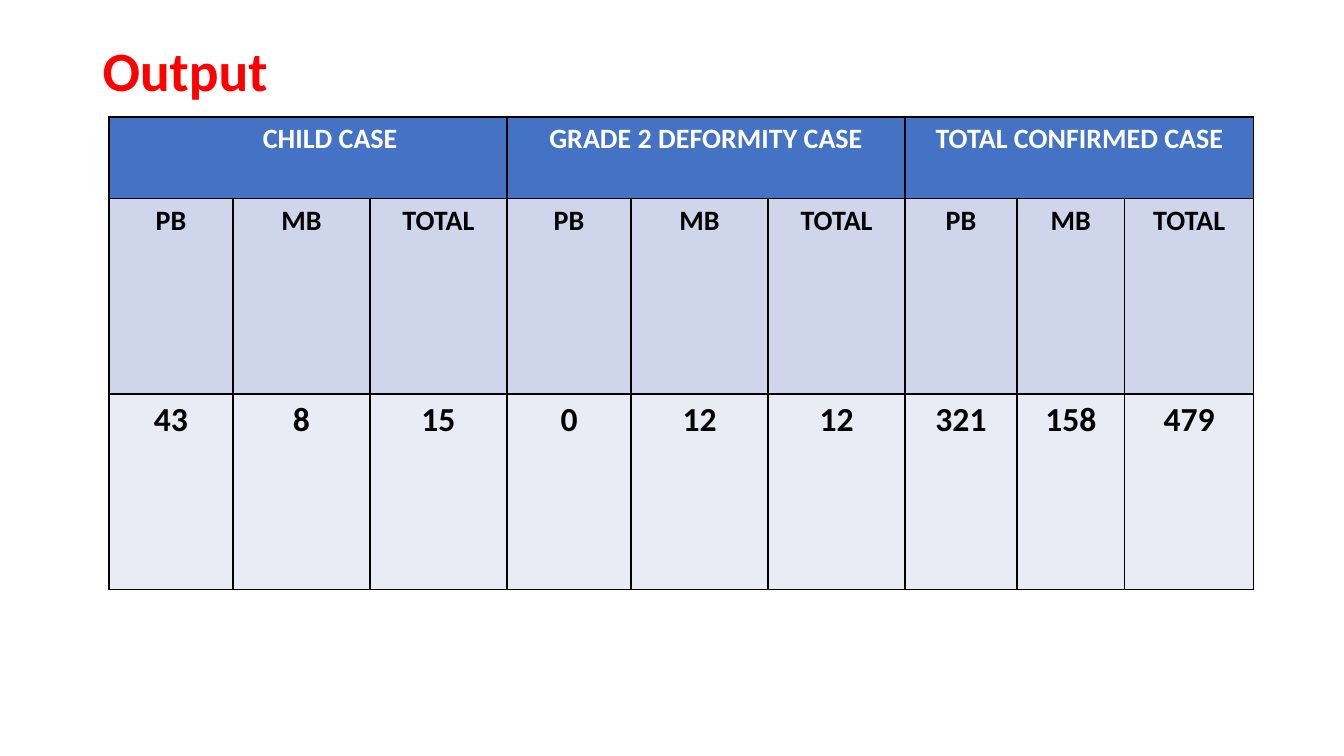
import pptx
import pptx.util
import pptx.dml.color
import pptx.enum.text
import pptx.oxml
import pptx.oxml.ns

Pt = pptx.util.Pt
ALIGN = pptx.enum.text.PP_ALIGN
ANCHOR = pptx.enum.text.MSO_ANCHOR

TITLE = "Output"
GROUPS = ["CHILD CASE", "GRADE 2 DEFORMITY CASE", "TOTAL CONFIRMED CASE"]
KINDS = ["PB", "MB", "TOTAL"]
COUNTS = ["43", "8", "15", "0", "12", "12", "321", "158", "479"]
WIDTHS = [88.6, 97.9, 97.9, 88.6, 97.9, 97.9, 79.9, 77, 92.2]
HEIGHTS = [58.3, 139.7, 139.7]
SPAN = len(KINDS)
HEAD = [GROUPS[c // SPAN] if c % SPAN == 0 else "" for c in range(len(WIDTHS))]
ROWS = [
    (HEAD, "4472C4", "FFFFFF", 20),
    (KINDS * len(GROUPS), "CFD5EA", "000000", 20),
    (COUNTS, "E9EBF5", "000000", 24),
]


def color(code):
    return pptx.dml.color.RGBColor.from_string(code)


def style(para, size, code):
    font = para.font
    font.name = "Calibri"
    font.size = Pt(size)
    font.bold = True
    font.color.rgb = color(code)


def border(cell):
    props = cell._tc.get_or_add_tcPr()
    for index, side in enumerate(["lnL", "lnR", "lnT", "lnB"]):
        line = pptx.oxml.parse_xml(
            f'<a:{side} {pptx.oxml.ns.nsdecls("a")} w="{Pt(1)}">'
            '<a:solidFill><a:srgbClr val="000000"/></a:solidFill>'
            f'</a:{side}>')
        props.insert(index, line)


def add_title(slide):
    box = slide.shapes.add_textbox(Pt(66.2), Pt(28.8), Pt(828), Pt(47.5))
    frame = box.text_frame
    frame.word_wrap = True
    frame.vertical_anchor = ANCHOR.MIDDLE
    para = frame.paragraphs[0]
    para.text = TITLE
    para.line_spacing = 0.9
    style(para, 39.6, "FF0000")


def add_cases(slide):
    table = slide.shapes.add_table(
        len(ROWS), len(WIDTHS), Pt(77.8), Pt(83.5),
        Pt(sum(WIDTHS)), Pt(sum(HEIGHTS))).table
    for col, width in zip(table.columns, WIDTHS):
        col.width = Pt(width)
    for row, height in zip(table.rows, HEIGHTS):
        row.height = Pt(height)
    for r, (texts, fill, ink, size) in enumerate(ROWS):
        for c, text in enumerate(texts):
            cell = table.cell(r, c)
            cell.fill.solid()
            cell.fill.fore_color.rgb = color(fill)
            border(cell)
            para = cell.text_frame.paragraphs[0]
            para.text = text
            para.alignment = ALIGN.CENTER
            style(para, size, ink)
    for c in range(0, len(WIDTHS), SPAN):
        table.cell(0, c).merge(table.cell(0, c + SPAN - 1))
    table.cell(0, 0).margin_left = Pt(39)


def main():
    deck = pptx.Presentation()
    deck.slide_width = Pt(960)
    deck.slide_height = Pt(540)
    slide = deck.slides.add_slide(deck.slide_layouts[6])
    add_cases(slide)
    add_title(slide)
    deck.save("out.pptx")


if __name__ == "__main__":
    main()
